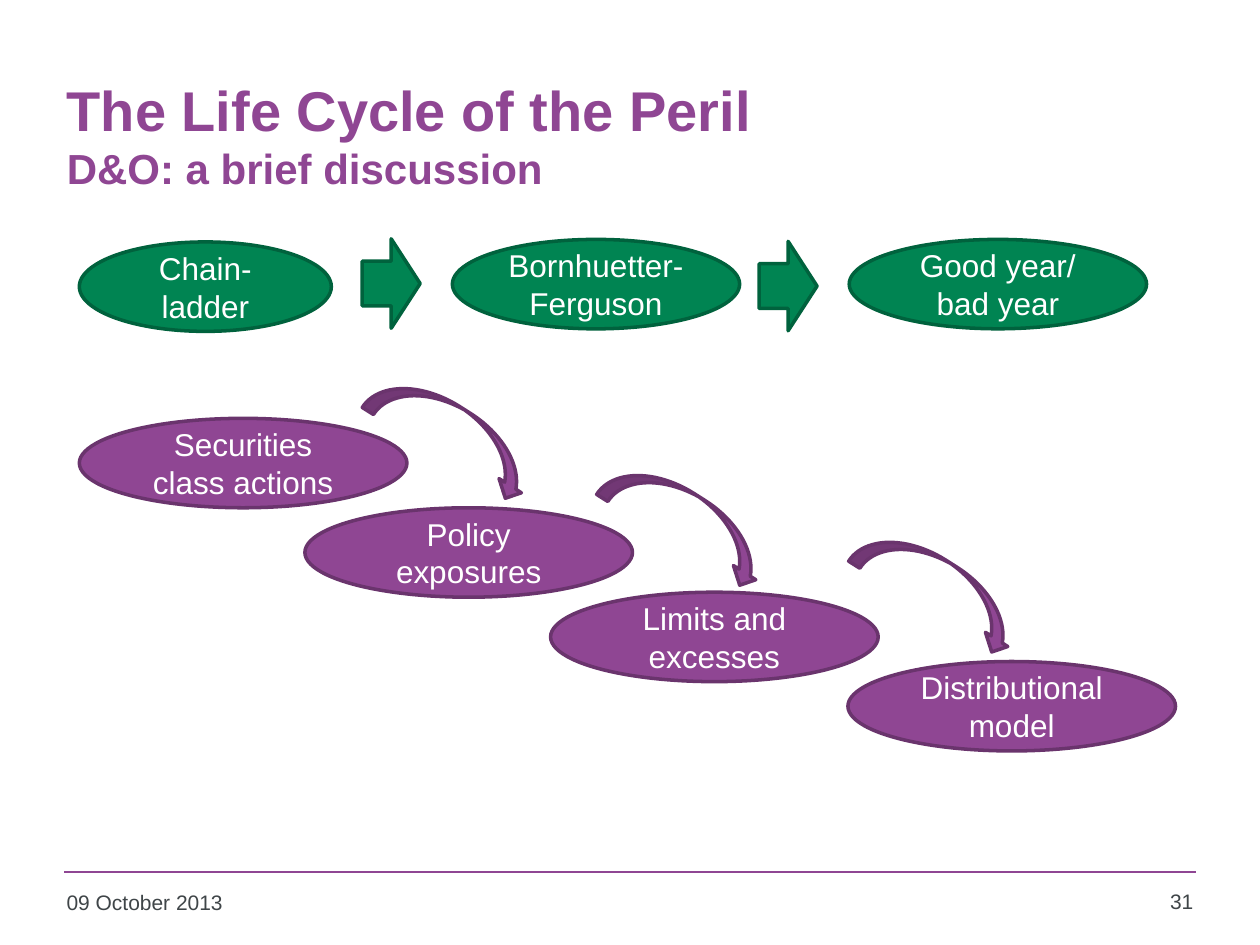
from dataclasses import dataclass

from pptx import Presentation
from pptx.dml.color import RGBColor
from pptx.enum.shapes import MSO_CONNECTOR, MSO_SHAPE
from pptx.enum.text import MSO_ANCHOR, PP_ALIGN
from pptx.oxml.ns import qn
from pptx.util import Inches, Pt

OVAL = MSO_SHAPE.OVAL
DOWN_ARROW = MSO_SHAPE.DOWN_ARROW
CURVED_ARROW = MSO_SHAPE.CURVED_LEFT_ARROW
MIDDLE = MSO_ANCHOR.MIDDLE
LEFT, CENTER, RIGHT = PP_ALIGN.LEFT, PP_ALIGN.CENTER, PP_ALIGN.RIGHT


@dataclass(frozen=True)
class Theme:
    font: str = "Arial"
    purple: RGBColor = RGBColor(0x8F, 0x46, 0x93)
    dark_purple: RGBColor = RGBColor(0x6A, 0x34, 0x6D)
    green: RGBColor = RGBColor(0x00, 0x84, 0x52)
    dark_green: RGBColor = RGBColor(0x00, 0x62, 0x3D)
    white: RGBColor = RGBColor(0xFF, 0xFF, 0xFF)
    grey: RGBColor = RGBColor(0x3F, 0x45, 0x48)
    title_size: Pt = Pt(32)
    subtitle_size: Pt = Pt(24)
    label_size: Pt = Pt(18)
    footer_size: Pt = Pt(12)


theme = Theme()
GREEN = (theme.green, theme.dark_green)
PURPLE = (theme.purple, theme.dark_purple)

presentation = Presentation()
presentation.slide_width = Inches(10)
presentation.slide_height = Inches(7.5)
slide = presentation.slides.add_slide(presentation.slide_layouts[5])


def style_paragraph(paragraph, size, color, alignment):
    paragraph.alignment = alignment
    paragraph.font.name = theme.font
    paragraph.font.size = size
    paragraph.font.color.rgb = color


def add_diagram_shape(kind, box, colors, label="", rotation=0):
    shape = slide.shapes.add_shape(kind, *map(Inches, box))
    shape.shadow.inherit = False
    shape.rotation = rotation
    shape.fill.solid()
    shape.fill.fore_color.rgb, shape.line.color.rgb = colors
    shape.line.width = Pt(2)
    if label:
        shape.text_frame.text = label
        shape.text_frame.word_wrap = True
        shape.text_frame.vertical_anchor = MIDDLE
        style_paragraph(shape.text_frame.paragraphs[0], theme.label_size, theme.white, CENTER)


# Title
title = slide.shapes.title
title.left, title.top, title.width, title.height = map(Inches, (0.43, 0.44, 9.07, 1.25))
title.text_frame.vertical_anchor = MIDDLE
heading = title.text_frame.paragraphs[0]
style_paragraph(heading, theme.title_size, theme.purple, LEFT)
heading.font.bold = True
heading.add_run().text = "The Life Cycle of the Peril"
heading.add_line_break()
subtitle = heading.add_run()
subtitle.text = "D&O: a brief discussion"
subtitle.font.size = theme.subtitle_size

# Footer
rule = slide.shapes.add_connector(
    MSO_CONNECTOR.STRAIGHT, Inches(0.51), Inches(6.92), Inches(9.49), Inches(6.92)
)
rule.line.color.rgb = theme.purple
rule.line.width = Pt(1)
shape_properties = rule._element.spPr
shape_properties.append(shape_properties.makeelement(qn("a:effectLst"), {}))

for text, box, alignment in (
    ("09 October 2013", (0.43, 7.01, 2.2, 0.36), LEFT),
    ("31", (8.86, 7, 0.71, 0.37), RIGHT),
):
    footer = slide.shapes.add_textbox(*map(Inches, box))
    footer.text_frame.word_wrap = True
    footer.text_frame.text = text
    style_paragraph(footer.text_frame.paragraphs[0], theme.footer_size, theme.grey, alignment)

# Staircase of modelling steps
for label, left, top in (
    ("Securities class actions", 0.63, 3.32),
    ("Policy exposures", 2.42, 4.03),
    ("Limits and excesses", 4.37, 4.7),
    ("Distributional model", 6.73, 5.25),
):
    add_diagram_shape(OVAL, (left, top, 2.6, 0.71), PURPLE, label)

for left, top in ((3.39, 2.72), (5.25, 3.41), (7.25, 3.94)):
    add_diagram_shape(CURVED_ARROW, (left, top, 0.42, 1.45), PURPLE, rotation=302.4)

# Row of reserving methods
for label, left, top, width in (
    ("Chain-ladder", 0.63, 1.92, 2),
    ("Bornhuetter-Ferguson", 3.59, 1.9, 2.28),
    ("Good year/ bad year", 6.74, 1.9, 2.36),
):
    add_diagram_shape(OVAL, (left, top, width, 0.71), GREEN, label)

for left, top in ((2.75, 2.02), (5.9, 2.04)):
    add_diagram_shape(DOWN_ARROW, (left, top, 0.71, 0.46), GREEN, rotation=270)

presentation.save("out.pptx")
